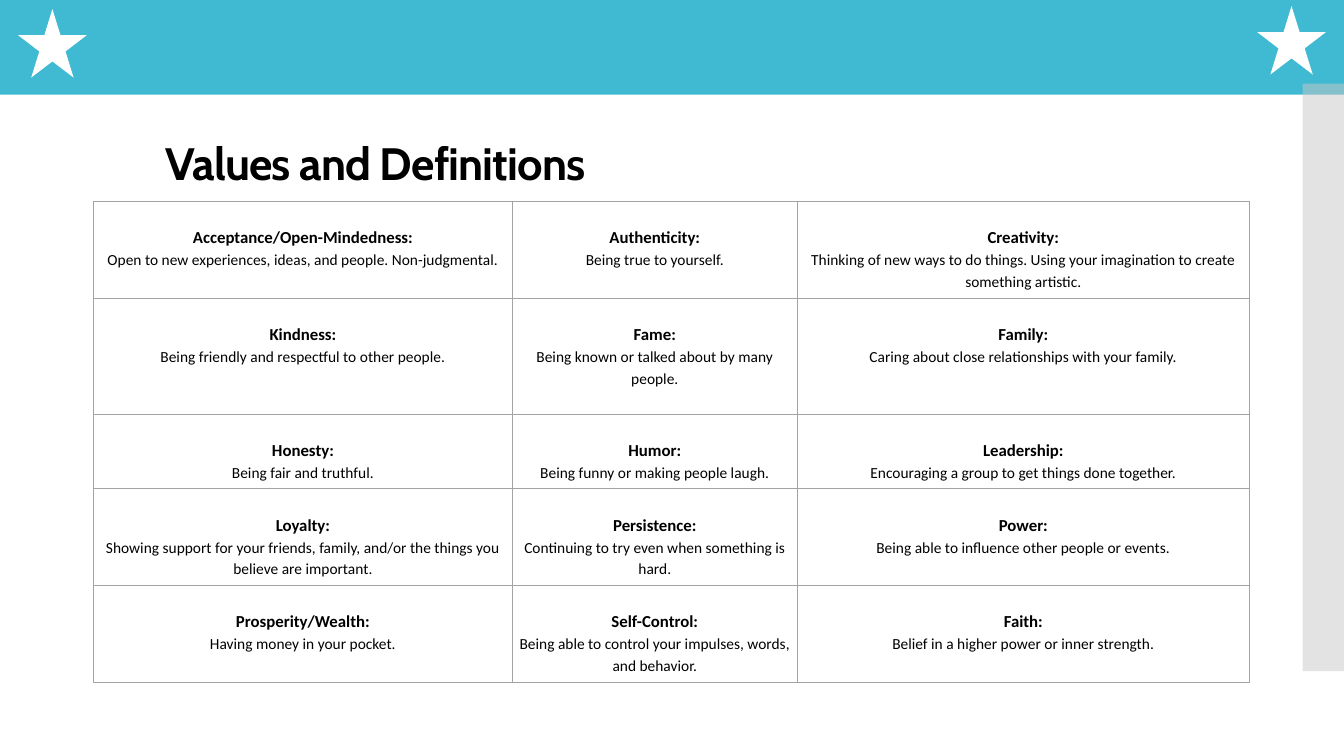
from lxml import etree
from pptx import Presentation
from pptx.dml.color import RGBColor
from pptx.enum.shapes import MSO_SHAPE
from pptx.enum.text import MSO_ANCHOR, PP_ALIGN
from pptx.oxml.ns import qn
from pptx.util import Pt

RECTANGLE = MSO_SHAPE.RECTANGLE
STAR = MSO_SHAPE.STAR_5_POINT
CENTER = PP_ALIGN.CENTER
LEFT = PP_ALIGN.LEFT
MIDDLE = MSO_ANCHOR.MIDDLE
TOP = MSO_ANCHOR.TOP

EMU_PER_PX = 9144
TITLE_ONLY = 5
COLORS = {"band": "40BAD2", "bar": "C8C8C8", "star": "FFFFFF",
          "text": "000000", "border": "A3A3A3"}
COLUMN_WIDTHS = [415, 283, 448]
ROW_HEIGHTS = [96, 115, 74, 96, 96]
VALUES = [
    [("Acceptance/Open-Mindedness:",
      "Open to new experiences, ideas, and people. Non-judgmental."),
     ("Authenticity:", "Being true to yourself."),
     ("Creativity:", "Thinking of new ways to do things. "
      "Using your imagination to create something artistic.")],
    [("Kindness:", "Being friendly and respectful to other people."),
     ("Fame:", "Being known or talked about by many people."),
     ("Family:", "Caring about close relationships with your family.")],
    [("Honesty:", "Being fair and truthful."),
     ("Humor:", "Being funny or making people laugh."),
     ("Leadership:", "Encouraging a group to get things done together.")],
    [("Loyalty:", "Showing support for your friends, family, "
      "and/or the things you believe are important."),
     ("Persistence:", "Continuing to try even when something is hard."),
     ("Power:", "Being able to influence other people or events.")],
    [("Prosperity/Wealth:", "Having money in your pocket."),
     ("Self-Control:",
      "Being able to control your impulses, words, and behavior."),
     ("Faith:", "Belief in a higher power or inner strength.")],
]


def px(length):
    return length * EMU_PER_PX


def color(name):
    return RGBColor.from_string(COLORS[name])


def write(para, text, size, font="Calibri", bold=False, align=CENTER,
          line_spacing=1.15, tracking=None):
    para.alignment = align
    para.line_spacing = line_spacing
    span = para.add_run()
    span.text = text
    span.font.name = font
    span.font.size = Pt(size)
    span.font.bold = bold
    span.font.color.rgb = color("text")
    if tracking is not None:
        span._r.get_or_add_rPr().set("spc", str(tracking))


def add_block(page, kind, left, top, width, height, fill, alpha=None):
    block = page.shapes.add_shape(kind, px(left), px(top), px(width), px(height))
    block.shadow.inherit = False
    block.fill.solid()
    block.fill.fore_color.rgb = color(fill)
    block.line.fill.background()
    if alpha is not None:
        tint = block._element.spPr.find(qn("a:solidFill"))[0]
        etree.SubElement(tint, qn("a:alpha"), val=str(alpha * 1000))


def set_title(page, text):
    title = page.shapes.title
    title.left, title.top = px(154), px(133)
    title.width, title.height = px(716), px(62)
    frame = title.text_frame
    frame.word_wrap = True
    frame.vertical_anchor = MIDDLE
    write(frame.paragraphs[0], text, 32.4, font="Cabin", bold=True,
          align=LEFT, line_spacing=0.9, tracking=-60)


def outline_cell(cell):
    properties = cell._tc.get_or_add_tcPr()
    for side in ("lnL", "lnR", "lnT", "lnB"):
        line = etree.SubElement(properties, qn(f"a:{side}"), w=str(Pt(1)))
        fill = etree.SubElement(line, qn("a:solidFill"))
        etree.SubElement(fill, qn("a:srgbClr"), val=COLORS["border"])


def fill_cell(cell, name, definition):
    outline_cell(cell)
    cell.fill.background()
    cell.margin_left = cell.margin_right = px(4)
    cell.margin_top, cell.margin_bottom = px(23), px(3)
    cell.vertical_anchor = TOP
    frame = cell.text_frame
    write(frame.paragraphs[0], name, 12, bold=True)
    write(frame.add_paragraph(), definition, 11)


def add_values_table(page):
    table = page.shapes.add_table(
        len(ROW_HEIGHTS), len(COLUMN_WIDTHS), px(93), px(200),
        px(sum(COLUMN_WIDTHS)), px(sum(ROW_HEIGHTS))).table
    table.first_row = False
    table.horz_banding = False
    for column, width in zip(table.columns, COLUMN_WIDTHS):
        column.width = px(width)
    for row, height, entries in zip(table.rows, ROW_HEIGHTS, VALUES):
        row.height = px(height)
        for cell, (name, definition) in zip(row.cells, entries):
            fill_cell(cell, name, definition)


def main():
    deck = Presentation()
    deck.slide_width, deck.slide_height = px(1333), px(750)
    page = deck.slides.add_slide(deck.slide_layouts[TITLE_ONLY])
    add_block(page, RECTANGLE, 0, -8, 1347, 102, "band")
    add_block(page, RECTANGLE, 1292, 83, 42, 583, "bar", alpha=50)
    for left, top in ((18, 9), (1247, 6)):
        add_block(page, STAR, left, top, 68, 68, "star")
    set_title(page, "Values and Definitions")
    add_values_table(page)
    deck.save("out.pptx")


if __name__ == "__main__":
    main()
